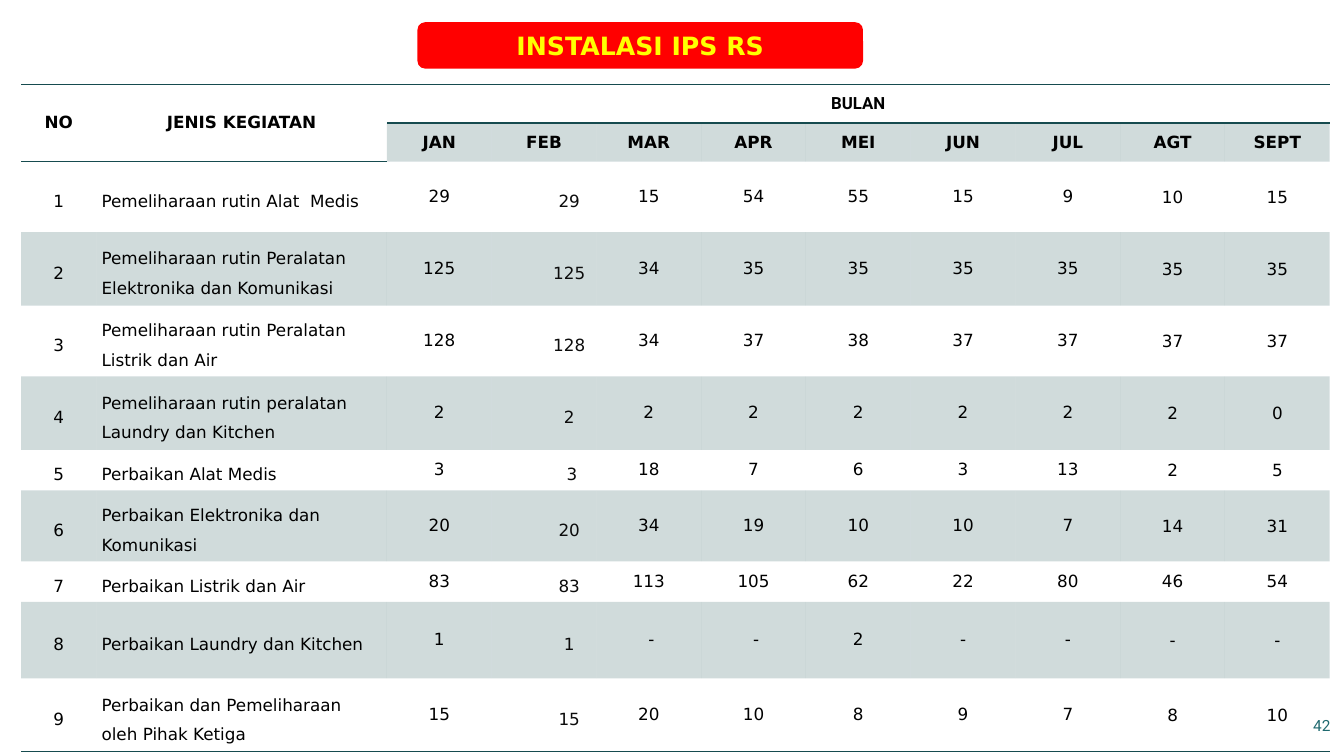
import pptx
import pptx.util
import pptx.dml.color
import pptx.enum.shapes
import pptx.enum.text
import pptx.oxml
import pptx.oxml.ns
import lxml.etree

Cm = pptx.util.Cm
ALIGN = pptx.enum.text.PP_ALIGN
MIDDLE = pptx.enum.text.MSO_ANCHOR.MIDDLE
NO_GRID_STYLE = "{2D5ABB26-0587-4C30-8999-92F81FD0307C}"

MONTHS = ["JAN", "FEB", "MAR", "APR", "MEI", "JUN", "JUL", "AGT", "SEPT"]
ACTIVITIES = [
    ("Pemeliharaan rutin Alat  Medis", "29|29|15|54|55|15|9|10|15"),
    ("Pemeliharaan rutin Peralatan Elektronika dan Komunikasi",
     "125|125|34|35|35|35|35|35|35"),
    ("Pemeliharaan rutin Peralatan Listrik dan Air",
     "128|128|34|37|38|37|37|37|37"),
    ("Pemeliharaan rutin peralatan Laundry dan Kitchen", "2|2|2|2|2|2|2|2|0"),
    ("Perbaikan Alat Medis", "3| 3|18|7|6|3|13|2|5"),
    ("Perbaikan Elektronika dan Komunikasi", "20|20|34|19|10|10|7|14|31"),
    ("Perbaikan Listrik dan Air", "83|83|113|105|62|22|80|46|54"),
    ("Perbaikan Laundry dan Kitchen", "1|1| -| -|2|-|-|-|-"),
    ("Perbaikan dan Pemeliharaan oleh Pihak Ketiga",
     "15|15|20|10|8|9|7|8|10"),
]
COL_WIDTHS = [1.9, 7.32] + [2.64] * len(MONTHS)
ROW_HEIGHTS = [0.97, 0.97, 1.78, 1.85, 1.78, 1.85, 0.97, 1.78, 0.97, 1.93, 1.85]
FEB, AGT = 3, 9


def color(hex_value):
    return pptx.dml.color.RGBColor.from_string(hex_value)


def set_all(obj, values):
    for name, value in values.items():
        setattr(obj, name, value)


class ActivitySlide:
    """Holds the table style and the slide that elements are added to."""
    font = "DejaVu Sans"
    teal = "164B4F"

    def __init__(self, prs):
        self.s = prs.slides.add_slide(prs.slide_layouts[5])

    def text(self, tf, text, align=ALIGN.CENTER, ink="000000", spacing=None,
             indent=0, **font):
        p = tf.paragraphs[0]
        set_all(p, {"alignment": align, "line_spacing": spacing})
        if indent:
            p._p.get_or_add_pPr().set("marL", str(Cm(indent)))
        r = p.add_run()
        r.text = text
        values = {"name": self.font, "size": pptx.util.Pt(12), "bold": False}
        set_all(r.font, {**values, **font})
        r.font.color.rgb = color(ink)

    def title(self, text, *box):
        """Put the title placeholder on a red rounded banner."""
        box = [Cm(v) for v in box]
        sp = self.s.shapes.add_shape(
            pptx.enum.shapes.MSO_SHAPE.ROUNDED_RECTANGLE, *box)
        sp.shadow.inherit = False
        sp.fill.solid()
        sp.fill.fore_color.rgb = color("FF0000")
        sp.line.fill.background()
        title = self.s.shapes.title
        set_all(title, dict(zip(("left", "top", "width", "height"), box)))
        sp._element.addnext(title._element)
        set_all(title.text_frame, {"vertical_anchor": MIDDLE, "word_wrap": True})
        self.text(title.text_frame, text, ink="FFFF00",
                  size=pptx.util.Pt(18), bold=True)

    def page_number(self, text, *box):
        tf = self.s.shapes.add_textbox(*[Cm(v) for v in box]).text_frame
        set_all(tf, {"vertical_anchor": MIDDLE, "word_wrap": True})
        self.text(tf, text, ALIGN.RIGHT, "1F696F", name="Roboto",
                  size=pptx.util.Pt(11))

    def table(self, left, top):
        frame = self.s.shapes.add_table(
            len(ROW_HEIGHTS), len(COL_WIDTHS), Cm(left), Cm(top),
            Cm(sum(COL_WIDTHS)), Cm(sum(ROW_HEIGHTS)))
        frame._element.xpath(".//a:tableStyleId")[0].text = NO_GRID_STYLE
        table = frame.table
        set_all(table, {"first_row": False, "horz_banding": False})
        for col, width in zip(table.columns, COL_WIDTHS):
            col.width = Cm(width)
        for row, height in zip(table.rows, ROW_HEIGHTS):
            row.height = Cm(height)
        return table

    def cell(self, cell, shaded=False, borders=(), tight=False):
        """Set margins, top and bottom borders and the band fill."""
        side = 0.02 if tight else 0.13
        set_all(cell, {"vertical_anchor": MIDDLE,
                       "margin_left": Cm(side), "margin_right": Cm(side),
                       "margin_top": Cm(side),
                       "margin_bottom": Cm(0 if tight else side)})
        for edge in borders:
            cell._tc.get_or_add_tcPr().append(pptx.oxml.parse_xml(
                f'<a:{edge} {pptx.oxml.ns.nsdecls("a")} w="12700"><a:solidFill>'
                f'<a:srgbClr val="{self.teal}"/></a:solidFill></a:{edge}>'))
        if not shaded:
            cell.fill.background()
            return
        cell.fill.solid()
        cell.fill.fore_color.rgb = color(self.teal)
        clr = cell._tc.tcPr.xpath("./a:solidFill/a:srgbClr")[0]
        lxml.etree.SubElement(clr, pptx.oxml.ns.qn("a:alpha"), val="20000")


def add_header(slide, table):
    for c in range(len(COL_WIDTHS)):
        slide.cell(table.cell(0, c), borders=("lnT", "lnB"))
        slide.cell(table.cell(1, c), shaded=c > 1,
                   borders=("lnB",) if c < 2 else ())
    for c, text, end in [(0, "NO", (1, 0)), (1, "JENIS KEGIATAN", (1, 1)),
                         (2, "BULAN", (0, len(COL_WIDTHS) - 1))]:
        cell = table.cell(0, c)
        cell.merge(table.cell(*end))
        slide.text(cell.text_frame, text, bold=True,
                   name="Roboto" if text == "BULAN" else slide.font)
    for c, month in enumerate(MONTHS, 2):
        slide.text(table.cell(1, c).text_frame, month, bold=True)


def add_activities(slide, table):
    formats = {0: {"spacing": 1.5},
               1: {"spacing": 1.5, "align": ALIGN.LEFT},
               FEB: {"spacing": 1.5, "indent": 1.27, "ink": "0C0C0C"}}
    for no, (activity, counts) in enumerate(ACTIVITIES, 1):
        for c, text in enumerate([str(no), activity, *counts.split("|")]):
            cell = table.cell(no + 1, c)
            slide.cell(cell, shaded=no % 2 == 0, tight=c >= AGT,
                       borders=("lnB",) if no == len(ACTIVITIES) else ())
            slide.text(cell.text_frame, text, **formats.get(c, {}))


def main():
    prs = pptx.Presentation()
    set_all(prs, {"slide_width": Cm(33.87), "slide_height": Cm(19.05)})
    slide = ActivitySlide(prs)
    slide.page_number("42", 32.74, 17.78, 1.04, 1.02)
    table = slide.table(0.53, 2.13)
    add_header(slide, table)
    add_activities(slide, table)
    slide.title("INSTALASI IPS RS", 10.52, 0.56, 11.23, 1.17)
    prs.save("out.pptx")


if __name__ == "__main__":
    main()
